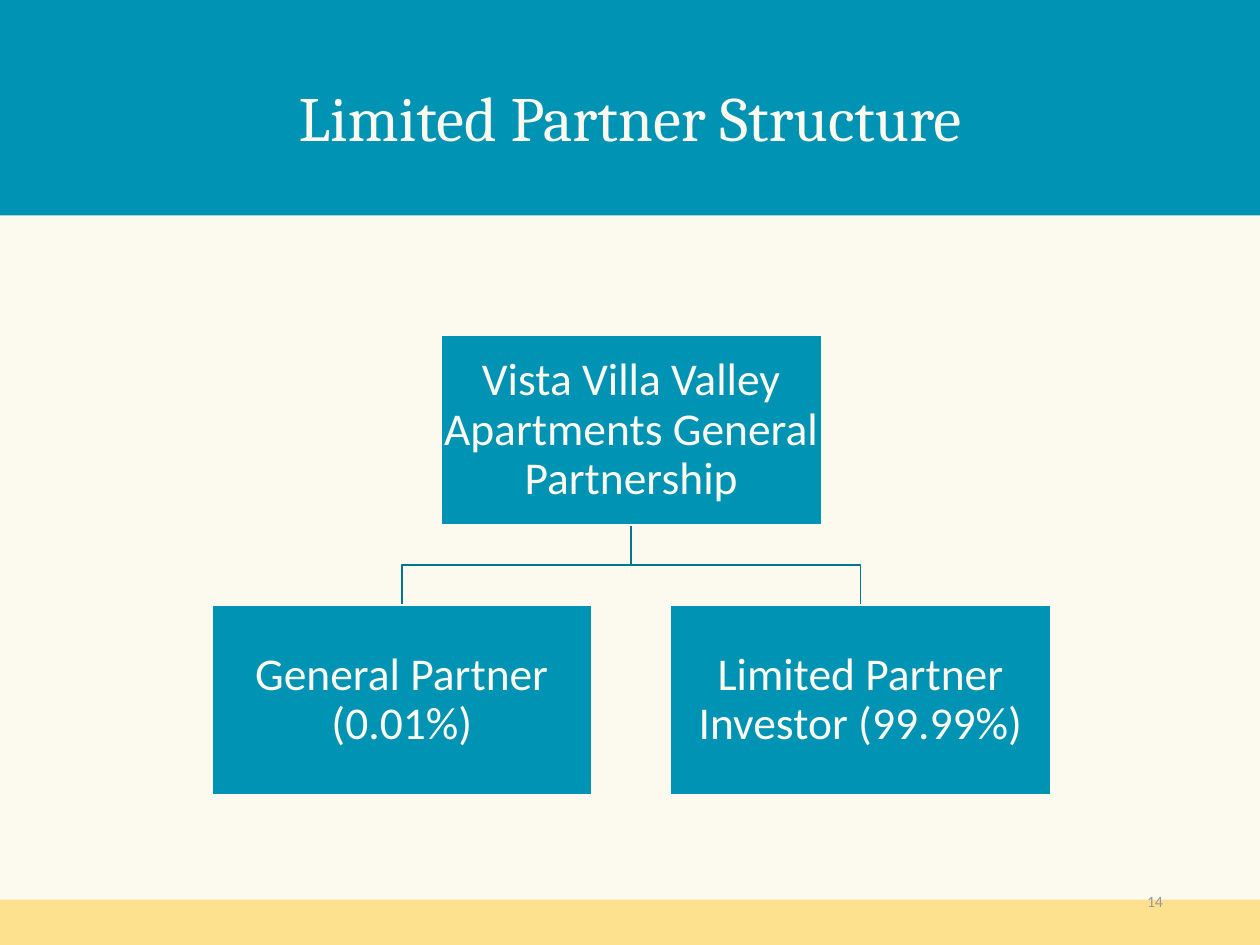
import pptx
import pptx.util
import pptx.dml.color
import pptx.enum.shapes
import pptx.enum.text

Inches = pptx.util.Inches
Pt = pptx.util.Pt
ALIGN = pptx.enum.text.PP_ALIGN
ANCHOR = pptx.enum.text.MSO_ANCHOR

COLORS = {
    "cream": "FCF9EF",
    "header": "0193B4",
    "node": "0193B3",
    "footer": "FDE18F",
    "branch": "01768F",
    "number": "999999",
}


class SlideBuilder:
    heading_font = "Cambria"
    body_font = "Calibri"

    def __init__(self, slide):
        self.slide = slide

    def color(self, name):
        return pptx.dml.color.RGBColor.from_string(COLORS[name])

    def background(self, color):
        fill = self.slide.background.fill
        fill.solid()
        fill.fore_color.rgb = self.color(color)

    def rectangle(self, left, top, width, height, fill, line=None):
        rectangle = self.slide.shapes.add_shape(
            pptx.enum.shapes.MSO_SHAPE.RECTANGLE,
            Inches(left), Inches(top), Inches(width), Inches(height))
        rectangle.shadow.inherit = False
        rectangle.fill.solid()
        rectangle.fill.fore_color.rgb = self.color(fill)
        if line:
            rectangle.line.color.rgb = self.color(line)
            rectangle.line.width = Pt(1)
        else:
            rectangle.line.fill.background()
        return rectangle

    def fill_text(self, frame, words, size, font, color, align, anchor, insets, spacing):
        frame.word_wrap = True
        frame.vertical_anchor = anchor
        frame.margin_left = frame.margin_right = Inches(insets[0])
        frame.margin_top = frame.margin_bottom = Inches(insets[1])
        paragraph = frame.paragraphs[0]
        paragraph.alignment = align
        paragraph.line_spacing = spacing
        run = paragraph.add_run()
        run.text = words
        run.font.size = Pt(size)
        run.font.name = font
        run.font.color.rgb = self.color(color)

    def text(self, left, top, width, height, words, size, font, color, align, anchor,
             spacing=1.0):
        box = self.slide.shapes.add_textbox(
            Inches(left), Inches(top), Inches(width), Inches(height))
        self.fill_text(box.text_frame, words, size, font, color, align, anchor,
                       (0.08, 0.04), spacing)

    def node(self, left, top, width, height, words):
        node = self.rectangle(left, top, width, height, "node", "cream")
        self.fill_text(node.text_frame, words, 26, self.body_font, "cream",
                       ALIGN.CENTER, ANCHOR.MIDDLE, (0.02, 0.02), 0.9)

    def branch(self, start, end):
        middle = (start[1] + end[1]) / 2
        corners = [(start[0], middle), (end[0], middle), end]
        outline = self.slide.shapes.build_freeform(Inches(start[0]), Inches(start[1]))
        outline.add_line_segments([(Inches(x), Inches(y)) for x, y in corners], close=False)
        branch = outline.convert_to_shape()
        branch.shadow.inherit = False
        branch.fill.background()
        branch.line.color.rgb = self.color("branch")
        branch.line.width = Pt(1)


def main():
    deck = pptx.Presentation()
    deck.slide_width, deck.slide_height = Inches(10), Inches(7.5)
    page = SlideBuilder(deck.slides.add_slide(deck.slide_layouts[6]))

    page.background("cream")
    page.rectangle(0, 7.14, 10, 0.36, "footer")
    page.rectangle(0, 0, 10, 1.71, "header")
    page.text(1.25, 0.43, 7.5, 0.84, "Limited Partner Structure", 36,
              page.heading_font, "cream", ALIGN.CENTER, ANCHOR.BOTTOM, 0.9)
    page.text(7.06, 6.95, 2.25, 0.4, "14", 9,
              page.body_font, "number", ALIGN.RIGHT, ANCHOR.MIDDLE)

    node_width, node_height = 3.02, 1.51
    center, partnership_top, partner_top = 5.01, 2.66, 4.8
    partner_offset = 1.82
    partners = [
        (center - partner_offset, "General Partner (0.01%)"),
        (center + partner_offset, "Limited Partner Investor (99.99%)"),
    ]
    for partner_center, _ in partners:
        page.branch((center, partnership_top + node_height), (partner_center, partner_top))
    page.node(center - node_width / 2, partnership_top, node_width, node_height,
              "Vista Villa Valley Apartments General Partnership")
    for partner_center, words in partners:
        page.node(partner_center - node_width / 2, partner_top, node_width, node_height, words)

    deck.save("out.pptx")


if __name__ == "__main__":
    main()
